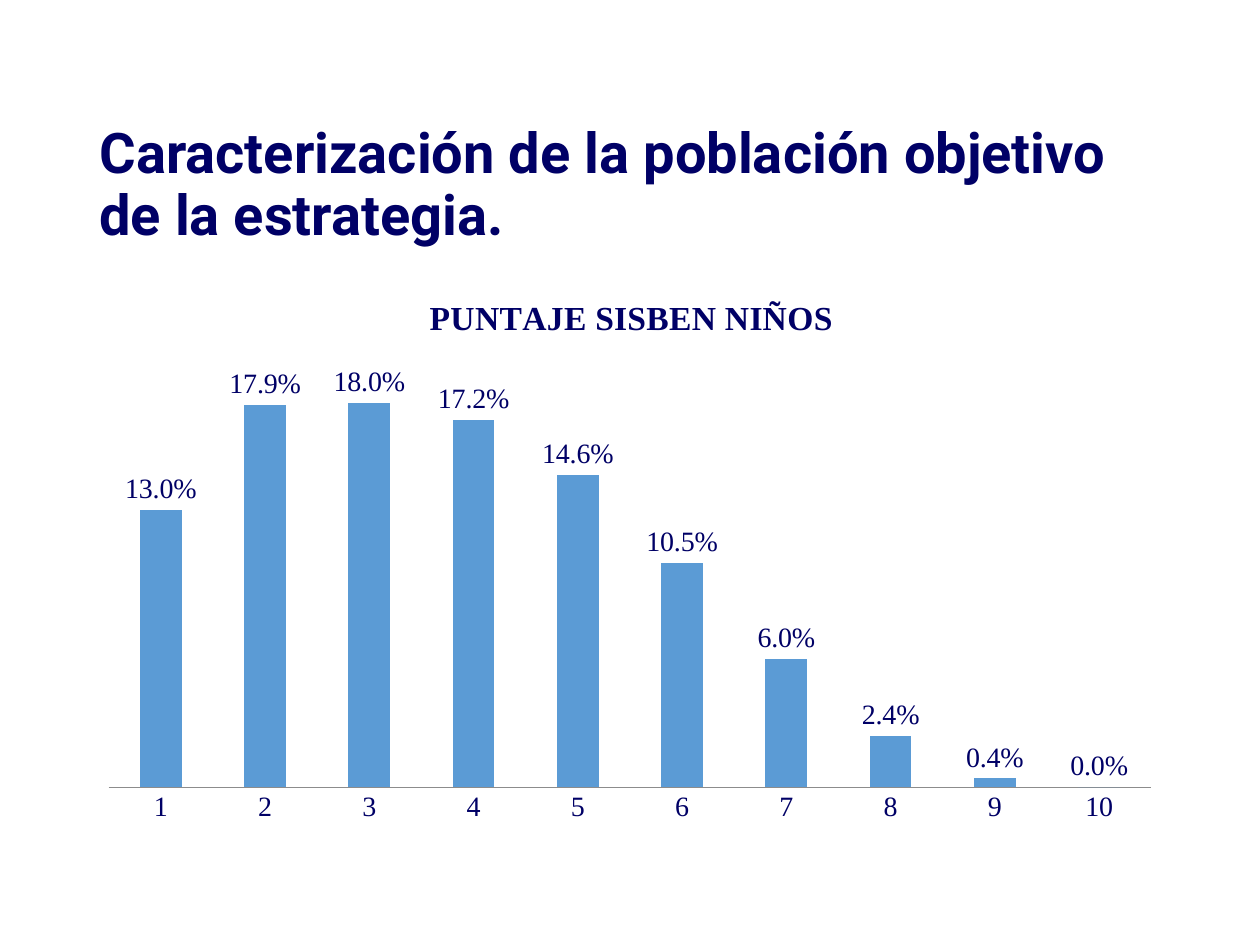
from lxml.etree import SubElement
from pptx import Presentation
from pptx.chart.data import CategoryChartData
from pptx.dml.color import RGBColor
from pptx.enum.chart import XL_CHART_TYPE, XL_LABEL_POSITION as LabelPos, XL_TICK_MARK as Tick
from pptx.enum.text import MSO_ANCHOR
from pptx.oxml.ns import qn
from pptx.util import Pt

PX = 914400 // 126
NAVY = RGBColor(0x00, 0x00, 0x66)
BLUE = RGBColor(0x5B, 0x9B, 0xD5)
GREY = RGBColor(0x8C, 0x8C, 0x8C)
SERIF = "Times New Roman"
LEFT, TOP, WIDTH, HEIGHT = 87, 273, 1086, 562
SCORES = [0.13, 0.179, 0.18, 0.172, 0.146, 0.105, 0.06, 0.024, 0.004, 0]


def set_font(font, name, size, bold=False):
    font.name, font.size, font.bold = name, Pt(size), bold
    font.color.rgb = NAVY


def place(parent, index, **values):
    """Give a chart part a manual layout, in fractions of the chart."""
    for old in parent.findall(qn("c:layout")):
        parent.remove(old)
    layout = SubElement(parent, qn("c:layout"))
    parent.insert(index, layout)
    manual = SubElement(layout, qn("c:manualLayout"))
    for tag, value in values.items():
        SubElement(manual, qn(f"c:{tag}")).set("val", str(value))


prs = Presentation()
prs.slide_width, prs.slide_height = 1260 * PX, 945 * PX
s = prs.slides.add_slide(prs.slide_layouts[6])

# Heading
tf = s.shapes.add_textbox(LEFT * PX, 137 * PX, WIDTH * PX, 96 * PX).text_frame
tf.word_wrap = True
tf.vertical_anchor = MSO_ANCHOR.MIDDLE
p = tf.paragraphs[0]
p.line_spacing = Pt(35)
r = p.add_run()
r.text = "Caracterización de la población objetivo de la estrategia."
set_font(r.font, "Roboto", 32, bold=True)

# Score chart
data = CategoryChartData(number_format="0.0%")
data.categories = [str(n) for n in range(1, 11)]
data.add_series("PUNTAJE SISBEN NIÑOS", SCORES)
chart = s.shapes.add_chart(XL_CHART_TYPE.COLUMN_CLUSTERED, LEFT * PX, TOP * PX,
                           WIDTH * PX, HEIGHT * PX, data).chart
set_font(chart.font, SERIF, 16)
chart.has_legend = False
chart.has_title = True
r = chart.chart_title.text_frame.paragraphs[0].add_run()
r.text = "PUNTAJE SISBEN NIÑOS"
set_font(r.font, SERIF, 19.2, bold=True)
place(chart.chart_title._element, 1, xMode="edge", yMode="edge", x=0.31, y=0.03)

plot = chart.plots[0]
place(plot._element.getparent(), 0, layoutTarget="inner", xMode="edge", yMode="edge",
      x=0.02, y=0.155, w=0.96, h=0.76)
plot.gap_width, plot.overlap = 150, -25
plot.vary_by_categories = False
fill = plot.series[0].format.fill
fill.solid()
fill.fore_color.rgb = BLUE
plot.has_data_labels = True
labels = plot.data_labels
labels.show_value = True
labels.number_format, labels.number_format_is_linked = "0.0%", False
labels.position = LabelPos.OUTSIDE_END
set_font(labels.font, SERIF, 16)

axis = chart.category_axis
axis.major_tick_mark = axis.minor_tick_mark = Tick.NONE
axis.format.line.color.rgb = GREY
axis.format.line.width = Pt(0.5)
set_font(axis.tick_labels.font, SERIF, 16)
axis = chart.value_axis
axis.visible = axis.has_major_gridlines = False
axis.minimum_scale, axis.maximum_scale = 0, 0.2

prs.save("out.pptx")
